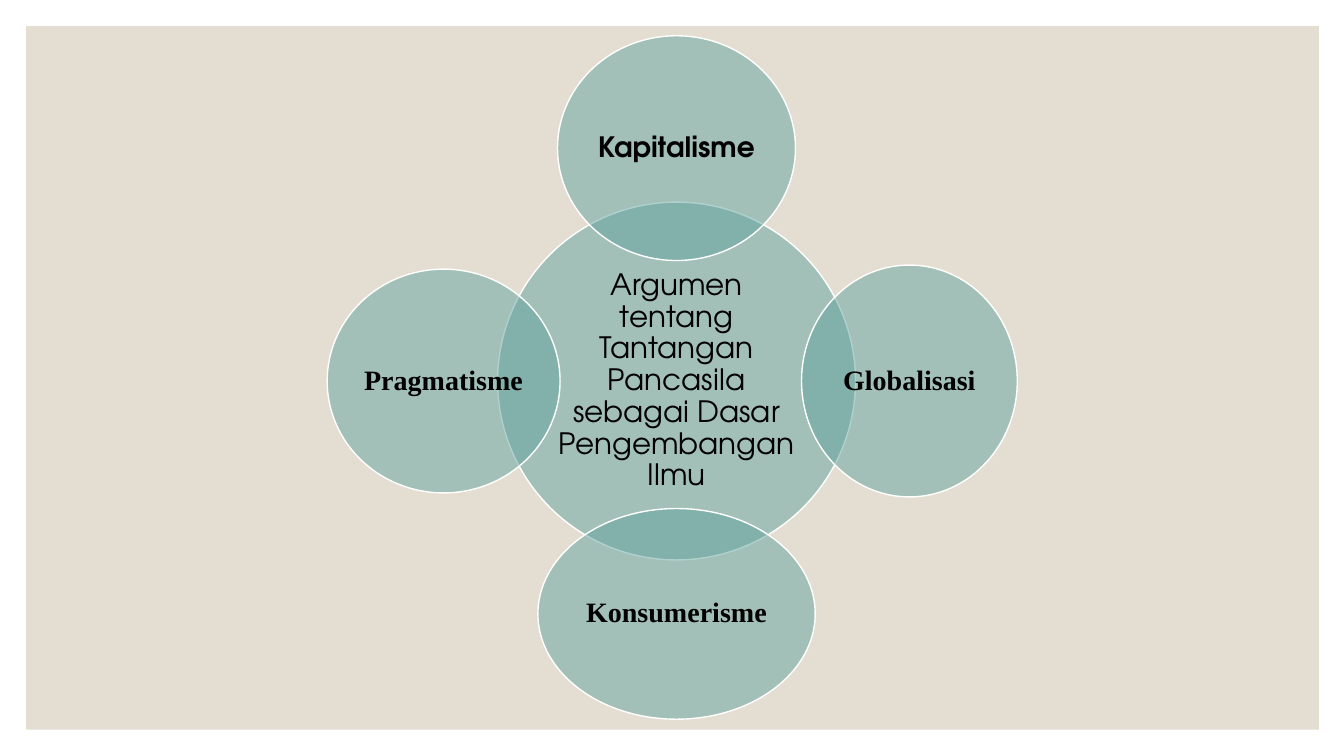
from dataclasses import dataclass

from lxml.etree import SubElement
from pptx import Presentation
from pptx.dml.color import RGBColor
from pptx.enum.shapes import MSO_SHAPE
from pptx.enum.text import MSO_ANCHOR, PP_ALIGN
from pptx.oxml.ns import qn
from pptx.util import Pt

SCALE = 9144  # EMU in one px, 100 px to the inch


@dataclass(frozen=True)
class Theme:
    panel: str = "E3DED1"
    teal: str = "62A39F"
    white: str = "FFFFFF"
    ink: str = "000000"
    sans: str = "TeX Gyre Adventor"
    serif: str = "Times New Roman"
    hub_size: int = 21
    tip_size: int = 20
    alpha: int = 50


THEME = Theme()


def px(num):
    return round(num * SCALE)


def rgb(code):
    return RGBColor.from_string(code)


def add_form(slide, kind, box, fill):
    form = slide.shapes.add_shape(kind, *map(px, box))
    form.shadow.inherit = False
    form.fill.solid()
    form.fill.fore_color.rgb = rgb(fill)
    return form


def add_text(form, text, font, size, bold, wrap):
    frame = form.text_frame
    frame.word_wrap = wrap
    frame.vertical_anchor = MSO_ANCHOR.MIDDLE
    frame.margin_left = frame.margin_right = px(3)
    frame.margin_top = frame.margin_bottom = px(3)
    para = frame.paragraphs[0]
    para.alignment = PP_ALIGN.CENTER
    para.line_spacing = 0.9
    run = para.add_run()
    run.text = text
    run.font.name = font
    run.font.size = Pt(size)
    run.font.bold = bold
    run.font.color.rgb = rgb(THEME.ink)


def add_oval(slide, mid, size, text, font, points, bold=True, wrap=False):
    (x, y), (wide, high) = mid, size
    box = (x - wide / 2, y - high / 2, wide, high)
    oval = add_form(slide, MSO_SHAPE.OVAL, box, THEME.teal)
    oval.line.color.rgb = rgb(THEME.white)
    oval.line.width = Pt(1)
    # See-through fill
    tint = oval.fill._xPr.find(qn("a:solidFill"))[0]
    SubElement(tint, qn("a:alpha")).set("val", str(THEME.alpha * 1000))
    add_text(oval, text, font, points, bold, wrap)


def main():
    deck = Presentation()
    deck.slide_width, deck.slide_height = px(1333), px(750)
    slide = deck.slides.add_slide(deck.slide_layouts[6])

    # Backdrop
    panel = add_form(slide, MSO_SHAPE.RECTANGLE, (26, 26, 1282, 698), THEME.panel)
    panel.line.fill.background()

    # Hub
    x, y, reach = 671, 378, 231
    add_oval(slide, (x, y), (355, 355),
             "Argumen tentang Tantangan Pancasila sebagai Dasar Pengembangan Ilmu",
             THEME.sans, THEME.hub_size, bold=False, wrap=True)

    # Circles around the hub, clockwise from the top
    tips = [
        ("Kapitalisme", 0, -1, (236, 223), THEME.sans),
        ("Globalisasi", 1, 0, (214, 230), THEME.serif),
        ("Konsumerisme", 0, 1, (275, 209), THEME.serif),
        ("Pragmatisme", -1, 0, (231, 222), THEME.serif),
    ]
    for text, right, down, size, font in tips:
        mid = (x + right * reach, y + down * reach)
        add_oval(slide, mid, size, text, font, THEME.tip_size)

    deck.save("out.pptx")


if __name__ == "__main__":
    main()
